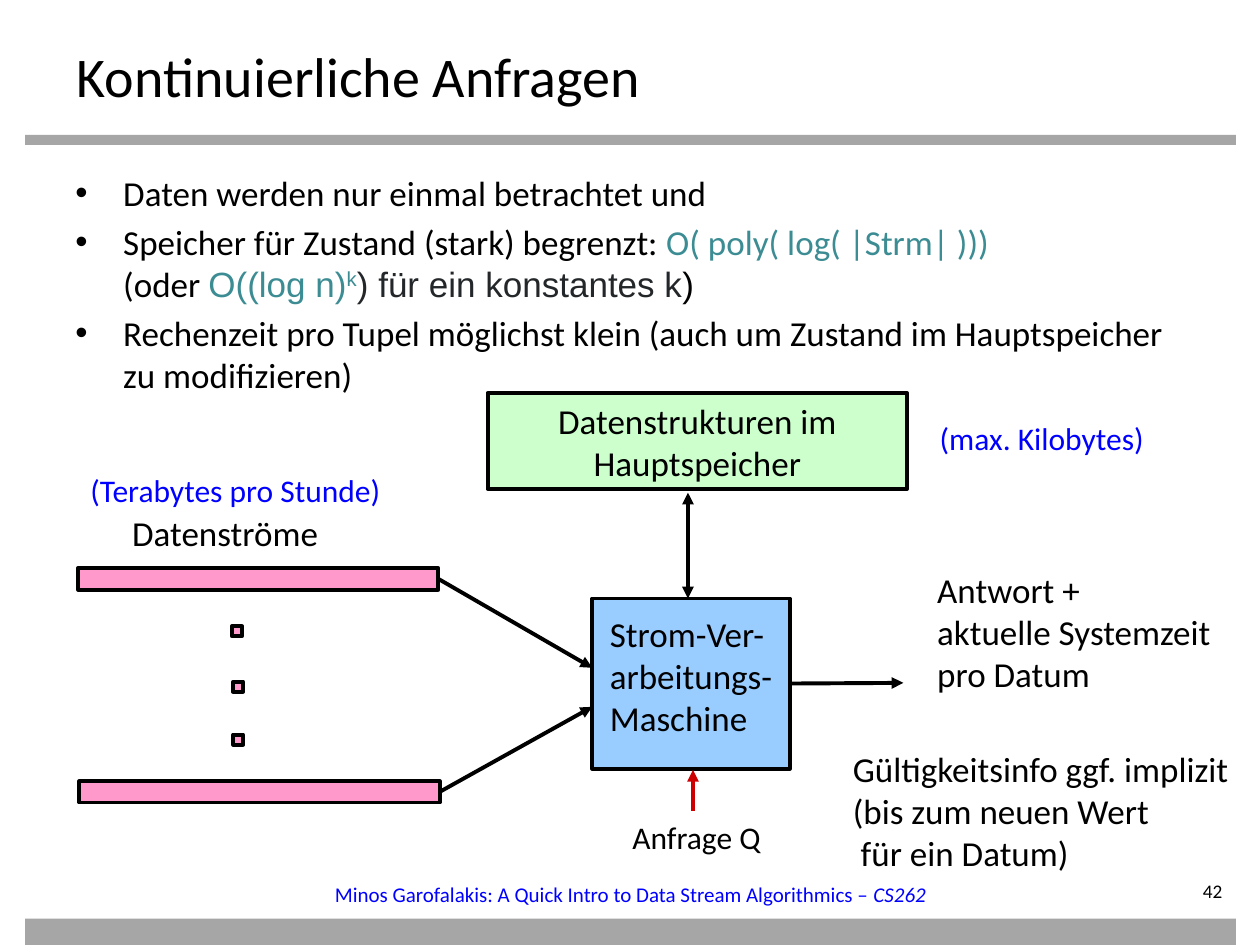
from lxml import etree
from pptx import Presentation
from pptx.dml.color import RGBColor
from pptx.enum.shapes import MSO_CONNECTOR, MSO_SHAPE
from pptx.enum.text import MSO_ANCHOR, MSO_AUTO_SIZE, PP_ALIGN
from pptx.oxml.ns import qn
from pptx.util import Inches, Pt

RECTANGLE = MSO_SHAPE.RECTANGLE
STRAIGHT = MSO_CONNECTOR.STRAIGHT
TOP = MSO_ANCHOR.TOP
GROW, FIXED = MSO_AUTO_SIZE.SHAPE_TO_FIT_TEXT, MSO_AUTO_SIZE.NONE
LEFT, CENTER, RIGHT = PP_ALIGN.LEFT, PP_ALIGN.CENTER, PP_ALIGN.RIGHT
LEFT_SIDE, RIGHT_SIDE = 1, 3

BLACK, BLUE, RED, GRAY = "000000", "0000FF", "CC0000", "A6A6A6"
TEAL, DARK = "3C8C93", "242729"
PINK, SKY, MINT = "FF99CC", "99CCFF", "CCFFCC"

TITLE = "Kontinuierliche Anfragen"
BULLETS = [
    [("Daten werden nur einmal betrachtet und", {})],
    [
        ("Speicher für Zustand (stark) begrenzt: ", {}),
        ("O( poly( log( |Strm| )))\n", {"color": TEAL}),
        ("(oder ", {}),
        ("O((log n)", {"color": TEAL, "font": "Arial"}),
        ("k", {"color": TEAL, "font": "Arial", "raised": True}),
        (") für ein konstantes k", {"color": DARK, "font": "Arial"}),
        (")", {"font": "Arial"}),
    ],
    [("Rechenzeit pro Tupel möglichst klein (auch um Zustand im "
      "Hauptspeicher zu modifizieren)", {})],
]
FOOTER = [
    ("Minos Garofalakis: A Quick Intro to Data Stream Algorithmics – ", {}),
    ("CS262", {"italic": True}),
]
LABELS = [
    ("Antwort +\naktuelle Systemzeit\npro Datum", (7.34, 4.46, 2.4, 1.11), 20, BLACK),
    ("Datenströme", (0.95, 4.01, 1.73, 0.44), 20, BLACK),
    ("(Terabytes pro Stunde)", (0.62, 3.69, 2.53, 0.4), 18, BLUE),
    ("Anfrage Q", (4.92, 6.44, 1.28, 0.4), 18, BLACK),
    ("(max. Kilobytes)", (7.36, 3.28, 1.84, 0.4), 18, BLUE),
    ("Gültigkeitsinfo ggf. implizit\n(bis zum neuen Wert\n für ein Datum)",
     (6.67, 5.88, 3.22, 1.11), 20, BLACK),
]
RULES = [(0.2, 1.07, 9.61, 0.08), (0.2, 7.29, 9.61, 0.21)]
STREAMS = [(0.62, 4.51, 2.86, 0.17), (0.63, 6.2, 2.86, 0.17)]
DOTS = [(1.84, 4.97), (1.85, 5.41), (1.85, 5.83)]
DOT_SIZE = 0.08
STREAM_ENDS = [(4.7, 5.3), (4.7, 5.61)]


def rgb(color):
    """Turn a hex string into a colour."""
    return RGBColor.from_string(color)


def inches(values):
    """Turn numbers into lengths."""
    return [Inches(value) for value in values]


def add_text(para, text, size=20, color=BLACK, font="Calibri", italic=None, raised=False):
    """Append formatted text to a paragraph, with line breaks at newlines."""
    for index, line in enumerate(text.split("\n")):
        if index:
            para.add_line_break()
        if not line:
            continue
        span = para.add_run()
        span.text = line
        span.font.size = Pt(size)
        span.font.name = font
        span.font.italic = italic
        span.font.color.rgb = rgb(color)
        if raised:
            span._r.get_or_add_rPr().set("baseline", "30000")


def set_frame(shape, margins=(0.1, 0.05, 0.1, 0.05), wrap=True, auto_size=FIXED):
    """Set margins, wrapping and anchor, and return the text frame."""
    frame = shape.text_frame
    frame.margin_left, frame.margin_top, frame.margin_right, frame.margin_bottom = inches(margins)
    frame.word_wrap = wrap
    frame.auto_size = auto_size
    frame.vertical_anchor = TOP
    return frame


def add_label(page, spans, place, size=20, color=BLACK, align=LEFT, **frame_format):
    """Add a one-paragraph text box."""
    box = page.shapes.add_textbox(*inches(place))
    para = set_frame(box, **frame_format).paragraphs[0]
    para.alignment = align
    for text, style in spans:
        add_text(para, text, size=size, color=color, **style)


def add_block(page, place, fill, outlined=True):
    """Add a filled rectangle."""
    block = page.shapes.add_shape(RECTANGLE, *inches(place))
    block.shadow.inherit = False
    block.fill.solid()
    block.fill.fore_color.rgb = rgb(fill)
    if outlined:
        block.line.color.rgb = rgb(BLACK)
        block.line.width = Pt(2.25)
    else:
        block.line.fill.background()
    return block


def fill_block(block, text, align, **frame_format):
    """Write text inside a rectangle."""
    para = set_frame(block, wrap=False, **frame_format).paragraphs[0]
    para.alignment = align
    add_text(para, text)


def add_arrow(page, start, end, color=BLACK, heads=("tailEnd",)):
    """Add a straight connector with triangular heads."""
    arrow = page.shapes.add_connector(STRAIGHT, *inches(start + end))
    arrow.line.color.rgb = rgb(color)
    arrow.line.width = Pt(2.25)
    for head in heads:
        etree.SubElement(arrow.line._get_or_add_ln(), qn(f"a:{head}"), type="triangle")
    etree.SubElement(arrow._element.spPr, qn("a:effectLst"))
    return arrow


def add_bullets(page):
    """Add the bulleted list."""
    frame = set_frame(page.shapes.add_textbox(*inches((0.5, 1.31, 9, 5.43))))
    for index, spans in enumerate(BULLETS):
        para = frame.add_paragraph() if index else frame.paragraphs[0]
        properties = para._p.get_or_add_pPr()
        properties.set("marL", str(Inches(0.38)))
        properties.set("indent", str(-Inches(0.38)))
        etree.SubElement(properties, qn("a:buFont"), typeface="Arial")
        etree.SubElement(properties, qn("a:buChar"), char="•")
        if index:
            para.space_before = Pt(4)
        for text, style in spans:
            add_text(para, text, **style)


def add_diagram(page):
    """Add the stream processing diagram."""
    streams = [add_block(page, place, PINK) for place in STREAMS]
    for left, top in DOTS:
        add_block(page, (left, top, DOT_SIZE, DOT_SIZE), PINK)
    machine = add_block(page, (4.7, 4.75, 1.57, 1.35), SKY)
    fill_block(machine, "Strom-Ver-\narbeitungs-\nMaschine", LEFT, margins=(0.14, 0.11, 0, 0))
    store = add_block(page, (3.87, 3.12, 3.33, 0.76), MINT)
    fill_block(store, "Datenstrukturen im\nHauptspeicher", CENTER)
    for stream, end in zip(streams, STREAM_ENDS):
        add_arrow(page, (3.48, 4.58), end).begin_connect(stream, RIGHT_SIDE)
    add_arrow(page, (6.27, 5.42), (7.17, 5.42)).begin_connect(machine, RIGHT_SIDE)
    add_arrow(page, (5.46, 3.91), (5.46, 4.75), heads=("headEnd", "tailEnd"))
    add_arrow(page, (5.5, 6.11), (5.5, 6.44), color=RED, heads=("headEnd",))
    for text, place, size, color in LABELS:
        add_label(page, [(text, {})], place, size, color, wrap=False, auto_size=GROW)


def main():
    """Build the slide and save it."""
    deck = Presentation()
    deck.slide_width, deck.slide_height = inches((10, 7.5))
    page = deck.slides.add_slide(deck.slide_layouts[5])
    for place in RULES:
        add_block(page, place, GRAY, outlined=False)
    title = page.shapes.title
    title.left, title.top, title.width, title.height = inches((0.51, 0.28, 9, 0.55))
    para = set_frame(title).paragraphs[0]
    para.alignment = LEFT
    add_text(para, TITLE, size=32)
    add_bullets(page)
    add_diagram(page)
    add_label(page, FOOTER, (2.56, 6.95, 5.08, 0.5), 12, BLUE)
    add_label(page, [("42", {})], (8.7, 6.98, 1.1, 0.22), 11, align=RIGHT, margins=(0, 0, 0.1, 0))
    deck.save("out.pptx")


if __name__ == "__main__":
    main()
